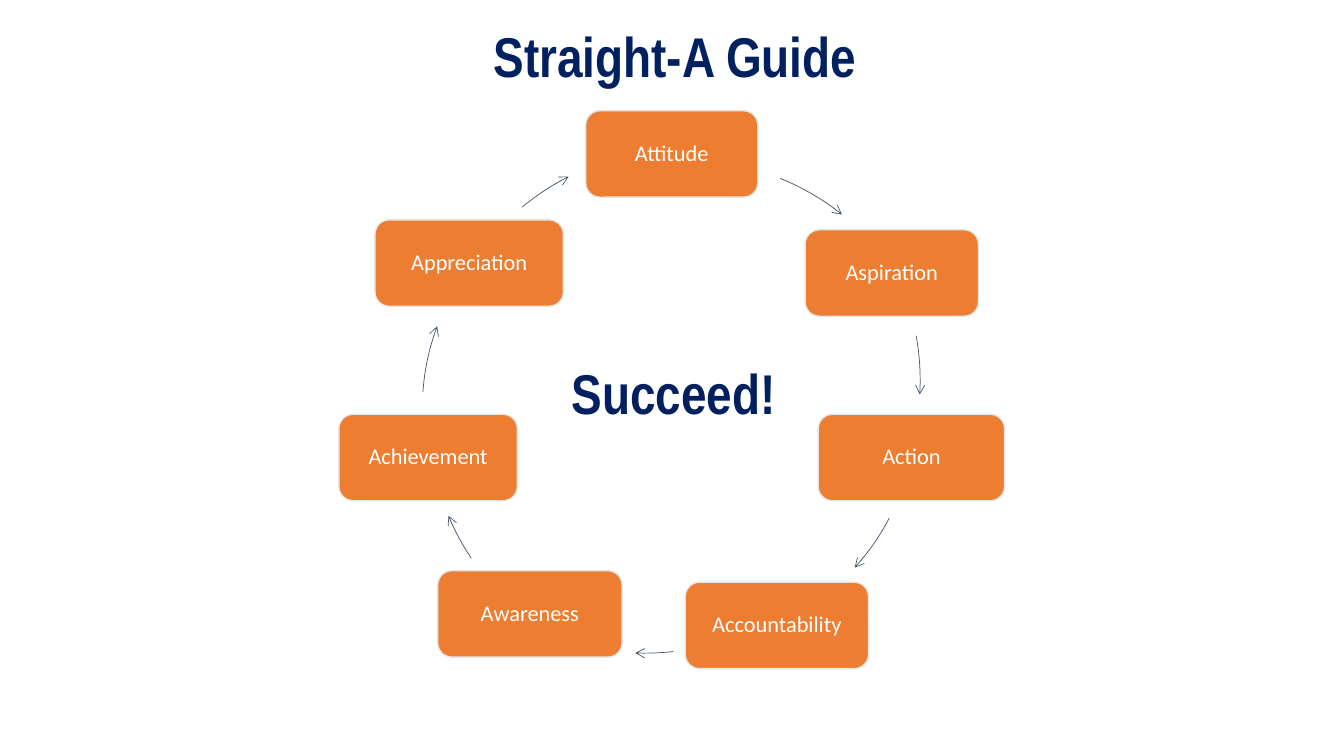
from dataclasses import dataclass

from lxml import etree
from pptx import Presentation
from pptx.dml.color import RGBColor
from pptx.enum.shapes import MSO_SHAPE
from pptx.enum.text import MSO_ANCHOR, MSO_AUTO_SIZE, PP_ALIGN
from pptx.oxml.ns import qn
from pptx.slide import Slide
from pptx.text.text import TextFrame
from pptx.util import Cm, Pt

ROUNDED = MSO_SHAPE.ROUNDED_RECTANGLE
ARC = MSO_SHAPE.ARC
LEFT, CENTER = PP_ALIGN.LEFT, PP_ALIGN.CENTER
TOP, MIDDLE = MSO_ANCHOR.TOP, MSO_ANCHOR.MIDDLE
NO_FIT = MSO_AUTO_SIZE.NONE
TITLE_ONLY = 5


@dataclass(frozen=True)
class TextStyle:
    font: str
    size: int
    color: RGBColor
    bold: bool = False


@dataclass(frozen=True)
class Theme:
    heading: TextStyle = TextStyle("Arial Narrow", 40, RGBColor(0x00, 0x20, 0x60), True)
    label: TextStyle = TextStyle("Calibri", 16, RGBColor(0xFF, 0xFF, 0xFF))
    box_fill: RGBColor = RGBColor(0xED, 0x7D, 0x31)
    box_line: RGBColor = RGBColor(0xE7, 0xE6, 0xE6)
    arrow: RGBColor = RGBColor(0x44, 0x54, 0x6A)


@dataclass(frozen=True)
class Step:
    """A box of the cycle, in centimetres."""
    label: str
    left: float
    top: float
    width: float


@dataclass(frozen=True)
class CycleArrow:
    """Circle centre in centimetres, clockwise angles in degrees."""
    center_x: float
    center_y: float
    start: float
    end: float


THEME = Theme()
BOX_HEIGHT = 2.18
BOX_INSET = Cm(0.28)
RADIUS = 6.25

STEPS = [
    Step("Attitude", 14.76, 2.79, 4.34),
    Step("Aspiration", 20.29, 5.79, 4.37),
    Step("Action", 20.62, 10.44, 4.7),
    Step("Accountability", 17.27, 14.67, 4.62),
    Step("Awareness", 11.03, 14.38, 4.65),
    Step("Achievement", 8.54, 10.44, 4.5),
    Step("Appreciation", 9.45, 5.54, 4.75),
]

ARROWS = [
    CycleArrow(17.32, 10.29, 292, 308.6),
    CycleArrow(16.94, 9.58, 349.7, 3.3),
    CycleArrow(16.89, 10.13, 27.9, 41.9),
    CycleArrow(16.26, 10.21, 83.5, 92.3),
    CycleArrow(17.07, 10.59, 146.2, 157.3),
    CycleArrow(16.89, 10.36, 184.4, 200),
    CycleArrow(17.15, 10.03, 230.3, 243.2),
]


def write(frame: TextFrame, text: str, style: TextStyle,
          align: PP_ALIGN, anchor: MSO_ANCHOR) -> None:
    frame.word_wrap = True
    frame.auto_size = NO_FIT
    frame.vertical_anchor = anchor
    para = frame.paragraphs[0]
    para.alignment = align
    span = para.add_run()
    span.text = text
    span.font.name = style.font
    span.font.size = Pt(style.size)
    span.font.bold = style.bold
    span.font.color.rgb = style.color


def add_headings(page: Slide) -> None:
    title = page.shapes.title
    title.left, title.top, title.width, title.height = Cm(12.19), Cm(0.41), Cm(13.08), Cm(1.96)
    write(title.text_frame, "Straight-A Guide", THEME.heading, LEFT, TOP)
    goal = page.shapes.add_textbox(Cm(10.74), Cm(8.92), Cm(12.47), Cm(1.96))
    write(goal.text_frame, "Succeed!", THEME.heading, CENTER, TOP)


def add_step(page: Slide, step: Step) -> None:
    box = page.shapes.add_shape(ROUNDED, Cm(step.left), Cm(step.top),
                                Cm(step.width), Cm(BOX_HEIGHT))
    box.shadow.inherit = False
    box.fill.solid()
    box.fill.fore_color.rgb = THEME.box_fill
    box.line.color.rgb = THEME.box_line
    box.line.width = Pt(1)
    frame = box.text_frame
    frame.margin_left = frame.margin_right = BOX_INSET
    frame.margin_top = frame.margin_bottom = BOX_INSET
    write(frame, step.label, THEME.label, CENTER, MIDDLE)
    frame.paragraphs[0].line_spacing = 0.9


def add_arrow(page: Slide, arrow: CycleArrow) -> None:
    arc = page.shapes.add_shape(ARC, Cm(arrow.center_x - RADIUS), Cm(arrow.center_y - RADIUS),
                                Cm(2 * RADIUS), Cm(2 * RADIUS))
    # Angles are stored in 60000ths of a degree, adjustments in 100000ths
    arc.adjustments[0] = arrow.start * 0.6
    arc.adjustments[1] = arrow.end * 0.6
    arc.shadow.inherit = False
    arc.fill.background()
    arc.line.color.rgb = THEME.arrow
    arc.line.width = Pt(0.5)
    outline = arc.element.find(".//" + qn("a:ln"))
    etree.SubElement(outline, qn("a:tailEnd"), type="arrow")


def main() -> None:
    deck = Presentation()
    deck.slide_width, deck.slide_height = Cm(33.87), Cm(19.05)
    page = deck.slides.add_slide(deck.slide_layouts[TITLE_ONLY])

    # Cycle of steps, each followed by its arrow
    for step, arrow in zip(STEPS, ARROWS):
        add_step(page, step)
        add_arrow(page, arrow)

    # Title and centre word
    add_headings(page)
    deck.save("out.pptx")


if __name__ == "__main__":
    main()
